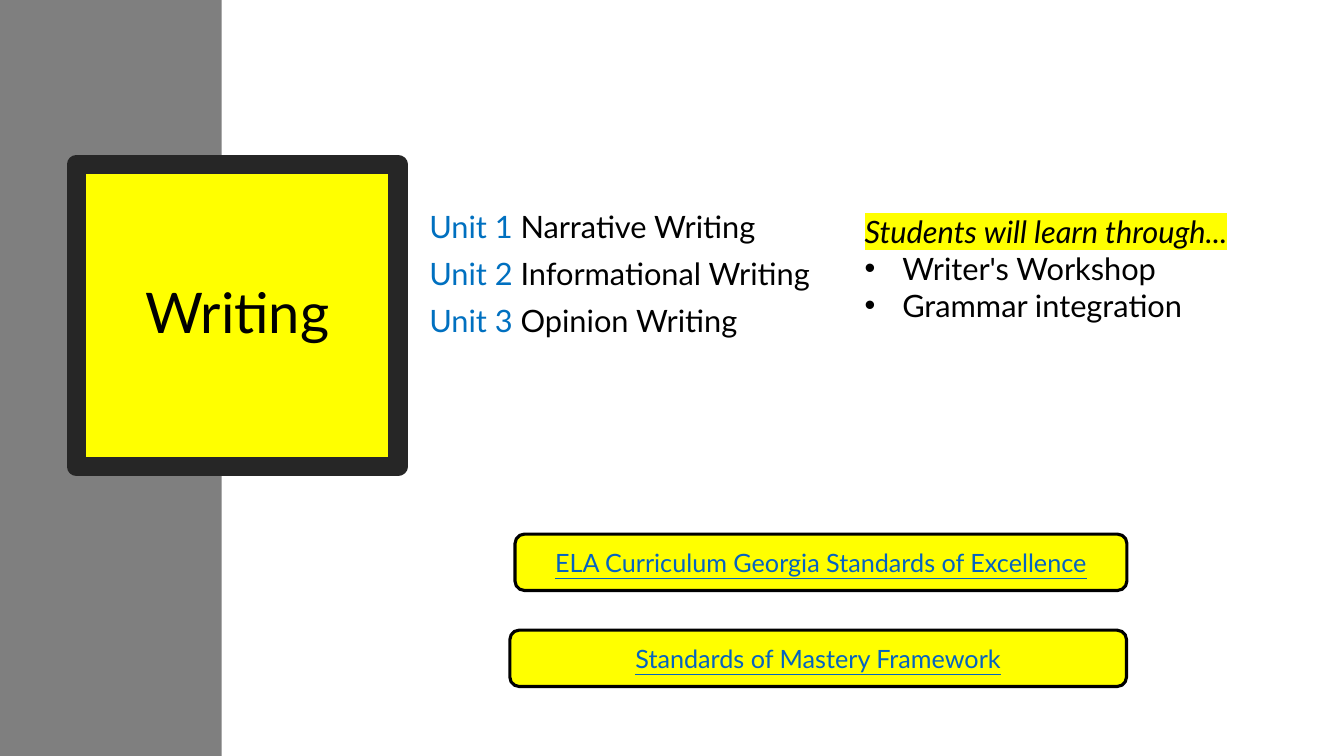
"""Build the Writing units slide."""
from lxml.etree import SubElement
from pptx import Presentation
from pptx.dml.color import RGBColor
from pptx.enum.shapes import MSO_SHAPE
from pptx.enum.text import MSO_ANCHOR, PP_ALIGN
from pptx.oxml.ns import qn
from pptx.util import Cm, Pt

COLORS = {
    "sidebar": "7F7F7F",
    "yellow": "FFFF00",
    "frame": "262626",
    "black": "000000",
    "unit": "0070C0",
    "link": "0563C1",
}
UNITS = ["Narrative Writing", "Informational Writing", "Opinion Writing"]
METHODS = ["Writer's Workshop", "Grammar integration"]
BUTTONS = [
    ("ELA Curriculum Georgia Standards of Excellence", (12.98, 13.46, 15.42, 1.42)),
    ("Standards of Mastery Framework", (12.85, 15.88, 15.54, 1.42)),
]


def rgb(name):
    """Return the named colour."""
    return RGBColor.from_string(COLORS[name])


def set_format(target, formats):
    """Set each attribute in formats on the target."""
    for attribute, value in formats.items():
        setattr(target, attribute, value)


def paint(shape, fill, line=None, width=0):
    """Fill a shape and outline it, or leave it without an outline."""
    shape.fill.solid()
    shape.fill.fore_color.rgb = rgb(fill)
    if line:
        shape.line.color.rgb = rgb(line)
        shape.line.width = Pt(width)
    else:
        shape.line.fill.background()


def add_run(paragraph, text, size, color="black", **formats):
    """Add a formatted run to a paragraph."""
    run = paragraph.add_run()
    run.text = text
    set_format(run.font, {"name": "Lato", "size": Pt(size), **formats})
    run.font.color.rgb = rgb(color)
    return run


def add_block(slide, shape_type, box, fill, line=None, width=0):
    """Add a painted preset shape."""
    block = slide.shapes.add_shape(shape_type, *map(Cm, box))
    block.shadow.inherit = False
    paint(block, fill, line, width)
    return block


def add_text_area(slide, box):
    """Add a wrapping text box and return its text frame."""
    frame = slide.shapes.add_textbox(*map(Cm, box)).text_frame
    frame.word_wrap = True
    return frame


def next_paragraph(frame, index):
    """Return the first paragraph for index 0, otherwise a new one."""
    return frame.add_paragraph() if index else frame.paragraphs[0]


def highlight(run, color):
    """Mark a run with a highlight colour."""
    properties = run.font._element
    mark = SubElement(properties, qn("a:highlight"))
    SubElement(mark, qn("a:srgbClr"), val=COLORS[color])
    properties.find(qn("a:solidFill")).addnext(mark)


def add_bullet(paragraph):
    """Give a paragraph a round bullet with a hanging indent."""
    properties = paragraph._p.get_or_add_pPr()
    indent = Cm(0.95)
    properties.set("marL", str(indent))
    properties.set("indent", str(-indent))
    SubElement(properties, qn("a:buFont"), typeface="Arial")
    SubElement(properties, qn("a:buChar"), char="•")


def format_title(slide):
    """Turn the title placeholder into the framed yellow block."""
    title = slide.shapes.title
    left, top, width, height = map(Cm, (1.93, 4.14, 8.1, 7.62))
    set_format(title, {"left": left, "top": top, "width": width, "height": height})
    paint(title, "yellow", "frame", 13.75)
    SubElement(title.line._get_or_add_ln(), qn("a:round"))
    title.text_frame.vertical_anchor = MSO_ANCHOR.MIDDLE
    heading = title.text_frame.paragraphs[0]
    set_format(heading, {"alignment": PP_ALIGN.CENTER, "line_spacing": 0.9})
    add_run(heading, "Writing", 40)
    return title


def add_units(slide):
    """Add the numbered list of units."""
    frame = add_text_area(slide, (10.57, 5.21, 10.52, 4.14))
    for index, name in enumerate(UNITS):
        unit = next_paragraph(frame, index)
        set_format(unit, {"line_spacing": 0.9, "space_before": Pt(10)})
        add_run(unit, f"Unit {index + 1} ", 22, "unit")
        add_run(unit, name, 22)


def add_methods(slide):
    """Add the highlighted lead-in and its bulleted methods."""
    frame = add_text_area(slide, (21.54, 5.23, 10.52, 3.07))
    lead_in = add_run(frame.paragraphs[0], "Students will learn through...", 22, italic=True)
    highlight(lead_in, "yellow")
    for name in METHODS:
        method = frame.add_paragraph()
        add_bullet(method)
        add_run(method, name, 22)


def add_button(slide, label, box):
    """Add a rounded button with an underlined label."""
    button = add_block(slide, MSO_SHAPE.ROUNDED_RECTANGLE, box, "yellow", "black", 2.25)
    button.text_frame.vertical_anchor = MSO_ANCHOR.MIDDLE
    caption = button.text_frame.paragraphs[0]
    caption.alignment = PP_ALIGN.CENTER
    add_run(caption, label, 18, "link", underline=True)


def main():
    """Build and save the slide."""
    deck = Presentation()
    set_format(deck, {"slide_width": Cm(33.87), "slide_height": Cm(19.05)})
    slide = deck.slides.add_slide(deck.slide_layouts.get_by_name("Title Only"))
    title = format_title(slide)
    sidebar = add_block(slide, MSO_SHAPE.RECTANGLE, (0, 0, 5.59, 19.05), "sidebar")
    title._element.addprevious(sidebar._element)
    for label, box in BUTTONS:
        add_button(slide, label, box)
    add_units(slide)
    add_methods(slide)
    deck.save("out.pptx")


if __name__ == "__main__":
    main()
